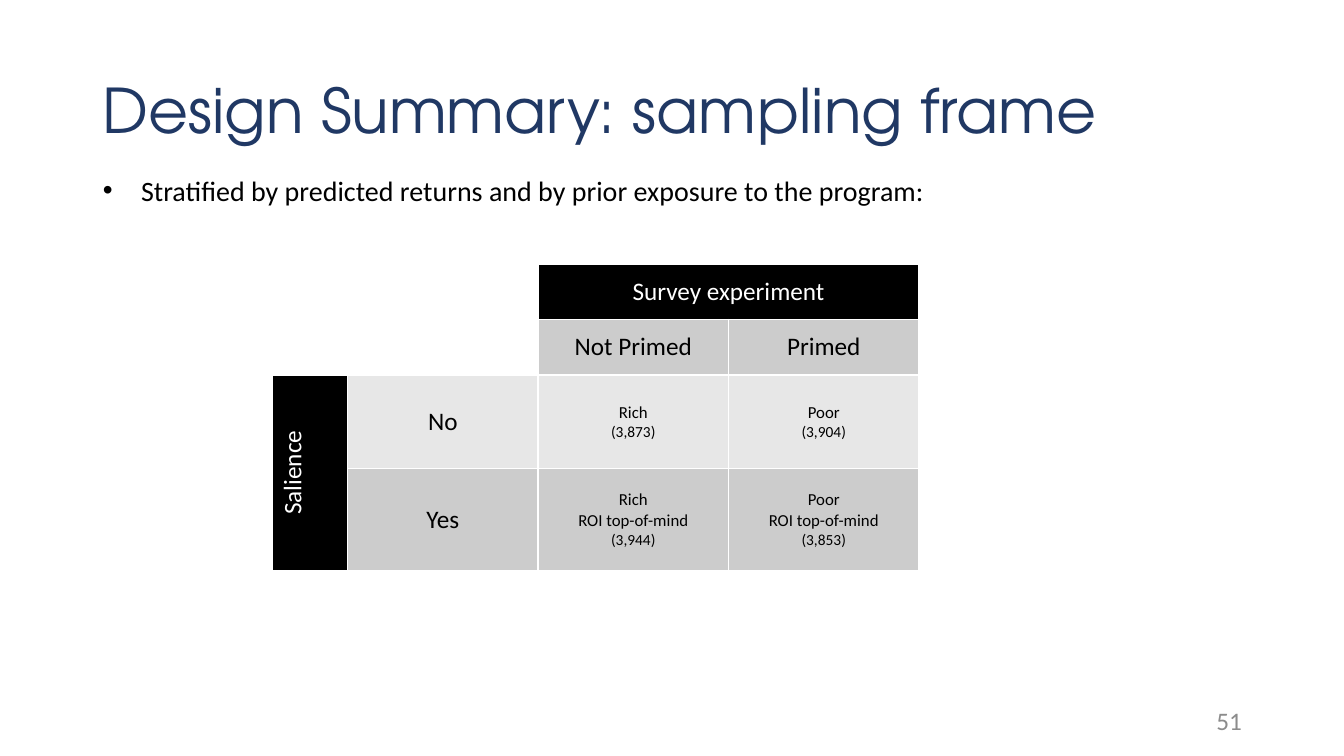
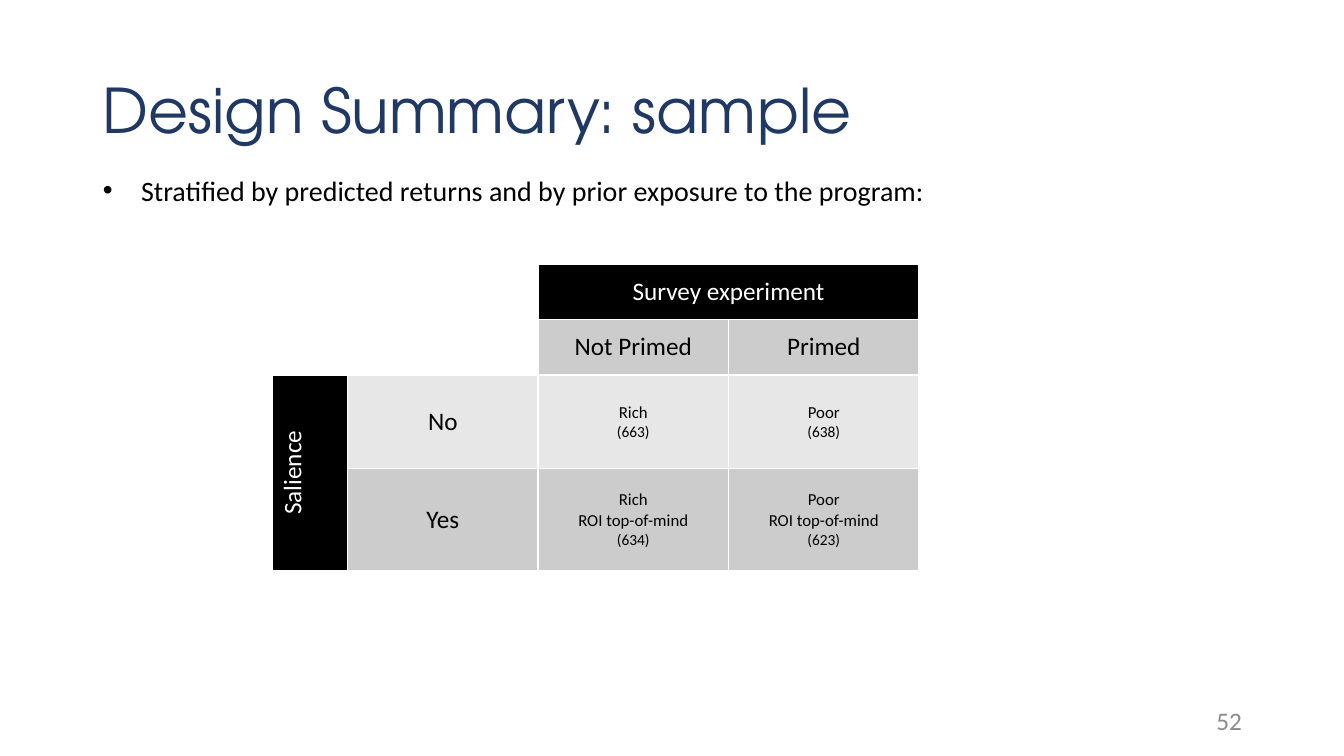
import pptx
import pptx.dml.color
import pptx.enum.text
import pptx.oxml
import pptx.oxml.ns
import pptx.util

Cm, Pt = pptx.util.Cm, pptx.util.Pt
RGBColor = pptx.dml.color.RGBColor
Align = pptx.enum.text.PP_ALIGN
Anchor = pptx.enum.text.MSO_ANCHOR
Fit = pptx.enum.text.MSO_AUTO_SIZE

# Colours and fonts
NAVY = RGBColor(0x20, 0x38, 0x64)
BLACK = RGBColor(0, 0, 0)
WHITE = RGBColor(0xFF, 0xFF, 0xFF)
DARK = RGBColor(0xCC, 0xCC, 0xCC)
LIGHT = RGBColor(0xE7, 0xE7, 0xE7)
GREY = RGBColor(0x8C, 0x8C, 0x8C)
HEAD_FONT = "TeX Gyre Adventor"
TEXT_FONT = "Calibri"

# Table grid in centimetres
COLS = (1.9, 4.8, 4.8, 4.8)
ROWS = (1.4, 1.4, 2.36, 2.57)


class Deck:
    def __init__(self):
        self.show = pptx.Presentation()
        self.show.slide_width = Cm(33.87)
        self.show.slide_height = Cm(19.05)
        self.slide = None

    def start(self):
        self.slide = self.show.slides.add_slide(self.show.slide_layouts[1])

    def style(self, para, size, color, align, font=TEXT_FONT):
        para.alignment = align
        para.font.size = Pt(size)
        para.font.name = font
        para.font.color.rgb = color

    def place(self, shape, left, top, width, height):
        shape.left, shape.top = Cm(left), Cm(top)
        shape.width, shape.height = Cm(width), Cm(height)
        frame = shape.text_frame
        frame.auto_size = Fit.NONE
        frame.word_wrap = True
        return frame

    def title(self, text):
        frame = self.place(self.slide.shapes.title, 2.34, 1.02, 29.21, 3.68)
        frame.vertical_anchor = Anchor.MIDDLE
        frame.text = text
        para = frame.paragraphs[0]
        para.line_spacing = 0.9
        self.style(para, 44, NAVY, Align.LEFT, HEAD_FONT)

    def bullet(self, text):
        frame = self.place(self.slide.placeholders[1], 2.34, 4.24, 28.4, 1.12)
        frame.text = text
        para = frame.paragraphs[0]
        para.space_before = Pt(0)
        props = para._p.get_or_add_pPr()
        props.set("marL", str(Cm(0.96)))
        props.set("indent", str(-Cm(0.96)))
        props.append(pptx.oxml.parse_xml(
            f'<a:buChar {pptx.oxml.ns.nsdecls("a")} char="•"/>'))
        self.style(para, 20, BLACK, Align.JUSTIFY)

    def number(self, num):
        box = self.slide.shapes.add_textbox(0, 0, 0, 0)
        frame = self.place(box, 23.93, 17.65, 7.62, 1.02)
        frame.vertical_anchor = Anchor.MIDDLE
        frame.text = str(num)
        self.style(frame.paragraphs[0], 18, GREY, Align.RIGHT)

    def border(self, cell):
        props = cell._tc.get_or_add_tcPr()
        for side in ("lnL", "lnR", "lnT", "lnB"):
            props.append(pptx.oxml.parse_xml(
                f'<a:{side} {pptx.oxml.ns.nsdecls("a")} w="{Pt(1)}">'
                f'<a:solidFill><a:srgbClr val="{WHITE}"/></a:solidFill></a:{side}>'))

    def fill(self, cell, text, back, color=BLACK, sizes=(18,)):
        cell.fill.solid()
        cell.fill.fore_color.rgb = back
        cell.vertical_anchor = Anchor.MIDDLE
        cell.text = text
        paras = cell.text_frame.paragraphs
        for i, para in enumerate(paras):
            size = sizes[-1] if i == len(paras) - 1 else sizes[0]
            self.style(para, size, color, Align.CENTER)

    def table(self, counts):
        table = self.slide.shapes.add_table(
            len(ROWS), len(COLS), Cm(6.86), Cm(6.65),
            Cm(sum(COLS)), Cm(sum(ROWS))).table
        table.first_row = table.horz_banding = False
        for col, width in zip(table.columns, COLS):
            col.width = Cm(width)
        for row, height in zip(table.rows, ROWS):
            row.height = Cm(height)
        for cell in table.iter_cells():
            self.border(cell)
            cell.fill.background()

        # Heads
        table.cell(0, 2).merge(table.cell(0, 3))
        table.cell(2, 0).merge(table.cell(3, 0))
        self.fill(table.cell(0, 2), "Survey experiment", BLACK, WHITE)
        side = table.cell(2, 0)
        self.fill(side, "Salience", BLACK, WHITE)
        side._tc.get_or_add_tcPr().set("vert", "vert270")
        for col, text in ((2, "Not Primed"), (3, "Primed")):
            self.fill(table.cell(1, col), text, DARK)

        # Groups and their counts
        bands = (("No", "", LIGHT), ("Yes", "ROI top-of-mind\n", DARK))
        for row, ((label, note, back), nums) in enumerate(zip(bands, counts), 2):
            self.fill(table.cell(row, 1), label, back)
            for col, (group, num) in enumerate(zip(("Rich", "Poor"), nums), 2):
                self.fill(table.cell(row, col), f"{group}\n{note}({num:,})",
                          back, sizes=(12, 11))


def main():
    deck = Deck()
    pages = (
        (51, "Design Summary: sampling frame", ((3873, 3904), (3944, 3853))),
        (52, "Design Summary: sample", ((663, 638), (634, 623))),
    )
    for num, title, counts in pages:
        deck.start()
        deck.title(title)
        deck.bullet("Stratified by predicted returns and by prior exposure "
                    "to the program:")
        deck.table(counts)
        deck.number(num)
    deck.show.save("out.pptx")


if __name__ == "__main__":
    main()
